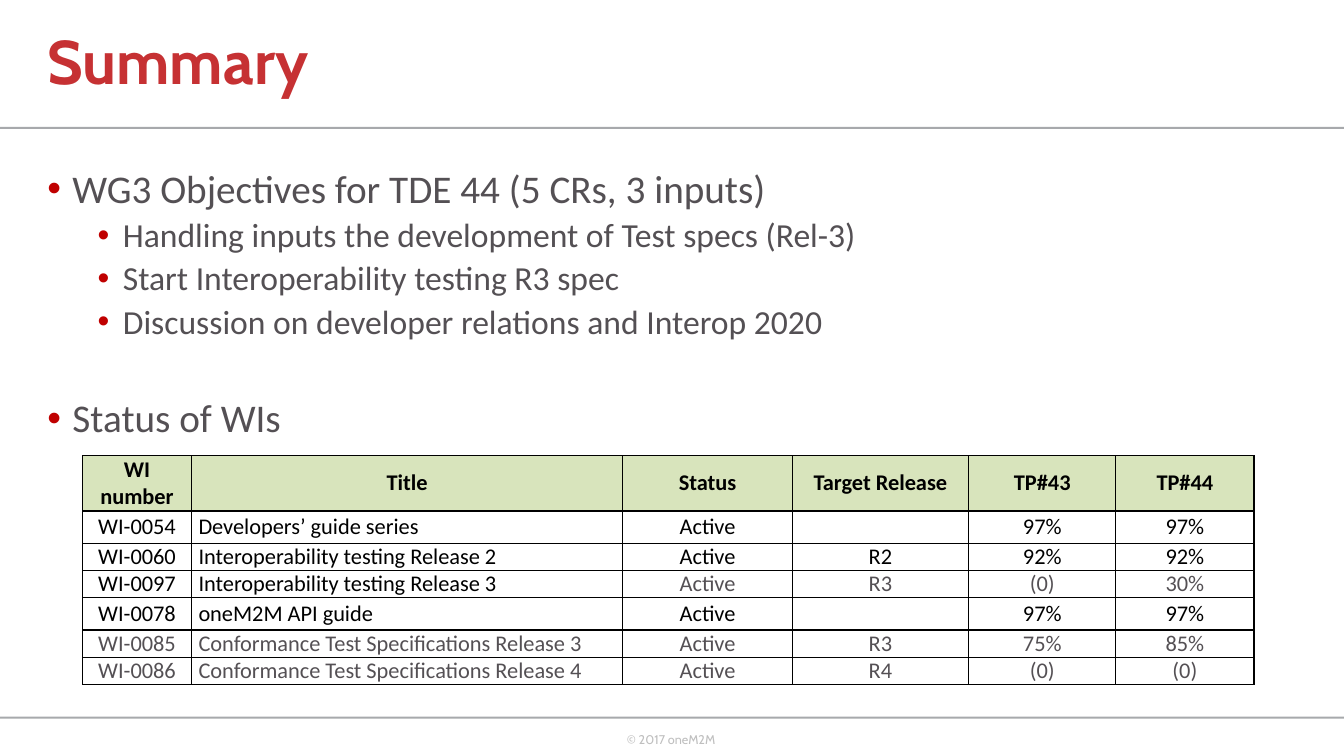
from lxml import etree
from pptx import Presentation, util as u
from pptx.dml.color import RGBColor
from pptx.enum import shapes, text
from pptx.oxml import parse_xml
from pptx.oxml.ns import qn

RED, GREY, BLACK, WHITE = "C63133", "545054", "000000", "FFFFFF"
RULE, BULLET, FOOTER, HEADER = "A7A9AC", "C00000", "BFBFBF", "D8E4BC"
DRAWING = "http://schemas.openxmlformats.org/drawingml/2006/main"

presentation = Presentation()
presentation.slide_width = u.Inches(13.33)
presentation.slide_height = u.Inches(7.5)
slide = presentation.slides.add_slide(presentation.slide_layouts[6])
column = presentation.slide_width / 100
row = presentation.slide_height / 100


def place(left, top, width, height):
    """Turn grid columns and rows into lengths on the slide."""
    return int(left * column), int(top * row), int(width * column), int(height * row)


def write(paragraph, words, font="Calibri", size=16, color=BLACK, bold=False,
          align=None, spacing=None, before=None):
    paragraph.alignment = align
    paragraph.line_spacing = spacing
    paragraph.space_before = before
    run = paragraph.add_run()
    run.text = words
    run.font.name = font
    run.font.size = u.Pt(size)
    run.font.bold = bold
    run.font.color.rgb = RGBColor.from_string(color)


# Rules above and below the content
for top in (16.8, 94.8):
    rule = slide.shapes.add_shape(shapes.MSO_SHAPE.RECTANGLE, *place(0, top, 100, 0.27))
    rule.shadow.inherit = False
    rule.fill.solid()
    rule.fill.fore_color.rgb = RGBColor.from_string(RULE)
    rule.line.fill.background()

# Footer and title
footer = slide.shapes.add_textbox(*place(45.9, 96.13, 8.25, 5.33)).text_frame
footer.word_wrap = False
write(footer.paragraphs[0], "© 2017 oneM2M", font="Cabin", size=9, color=FOOTER)

title = slide.shapes.add_textbox(*place(2.78, 0, 64.4, 17.07)).text_frame
title.word_wrap = True
title.vertical_anchor = text.MSO_ANCHOR.MIDDLE
write(title.paragraphs[0], "Summary", font="Cabin", size=44, color=RED, bold=True, spacing=0.9)

# Bulleted objectives: level, space before, words
objectives = [
    (0, 0, "WG3 Objectives for TDE 44 (5 CRs, 3 inputs)"),
    (1, 5, "Handling inputs the development of Test specs (Rel-3)"),
    (1, 5, "Start Interoperability testing R3 spec"),
    (1, 5, "Discussion on developer relations and Interop 2020"),
    (0, 41, "Status of WIs"),
]
body = slide.shapes.add_textbox(*place(2.78, 21.73, 86.25, 63.47)).text_frame
body.word_wrap = True
for number, (level, before, words) in enumerate(objectives):
    paragraph = body.add_paragraph() if number else body.paragraphs[0]
    paragraph.level = level
    properties = paragraph._p.get_or_add_pPr()
    properties.set("marL", str(u.Inches(0.25 + 0.5 * level)))
    properties.set("indent", str(u.Inches(-0.25)))
    bullet_color = etree.SubElement(properties, qn("a:buClr"))
    etree.SubElement(bullet_color, qn("a:srgbClr"), val=BULLET)
    etree.SubElement(properties, qn("a:buFont"), typeface="Arial")
    etree.SubElement(properties, qn("a:buChar"), char="•")
    write(paragraph, words, size=28 - 4 * level, color=GREY, spacing=0.9, before=u.Pt(before))

# Work item table: words of each row and the columns that are set in grey
work_items = [
    (["WI number", "Title", "Status", "Target Release", "TP#43", "TP#44"], ()),
    (["WI-0054", "Developers’ guide series", "Active", "", "97%", "97%"], ()),
    (["WI-0060", "Interoperability testing Release 2", "Active", "R2", "92%", "92%"], ()),
    (["WI-0097", "Interoperability testing Release 3", "Active", "R3", "(0)", "30%"], range(2, 6)),
    (["WI-0078", "oneM2M API guide", "Active", "", "97%", "97%"], ()),
    (["WI-0085", "Conformance Test Specifications Release 3", "Active", "R3", "75%", "85%"], range(6)),
    (["WI-0086", "Conformance Test Specifications Release 4", "Active", "R4", "(0)", "(0)"], range(6)),
]
widths = [8.1, 32.1, 12.6, 13.13, 10.95, 10.28]
heights = [7.33, 4.27, 3.6, 3.6, 4.27, 3.6, 3.6]
table = slide.shapes.add_table(
    len(heights), len(widths), *place(6.15, 60.27, sum(widths), sum(heights))).table
for table_column, width in zip(table.columns, widths):
    table_column.width = int(width * column)
for table_row, height in zip(table.rows, heights):
    table_row.height = int(height * row)

for r, (entries, grey_columns) in enumerate(work_items):
    for c, words in enumerate(entries):
        cell = table.cell(r, c)
        cell.margin_left = cell.margin_right = u.Inches(0.07)
        cell.margin_top = cell.margin_bottom = 0
        cell.vertical_anchor = text.MSO_ANCHOR.MIDDLE
        for side in ("lnL", "lnR", "lnT", "lnB"):
            cell._tc.get_or_add_tcPr().append(parse_xml(
                f'<a:{side} xmlns:a="{DRAWING}" w="{u.Pt(1)}"><a:solidFill>'
                f'<a:srgbClr val="{BLACK}"/></a:solidFill></a:{side}>'))
        cell.fill.solid()
        cell.fill.fore_color.rgb = RGBColor.from_string(WHITE if r else HEADER)
        if words:
            left_aligned = r > 0 and c == 1
            write(cell.text_frame.paragraphs[0], words, bold=r == 0,
                  color=GREY if c in grey_columns else BLACK,
                  align=text.PP_ALIGN.LEFT if left_aligned else text.PP_ALIGN.CENTER)

presentation.save("out.pptx")
